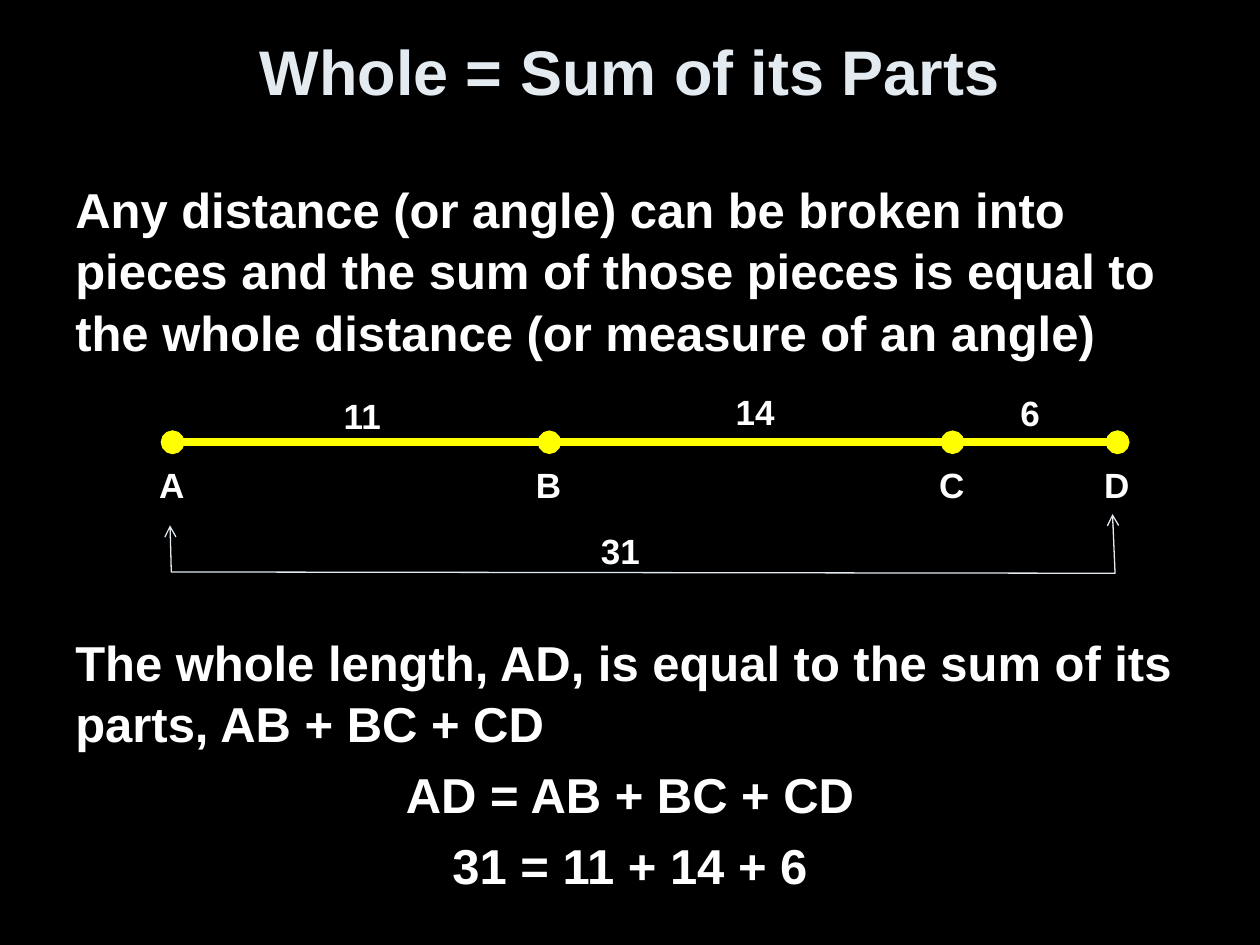
from lxml.etree import SubElement
from pptx import Presentation
from pptx.dml.color import RGBColor
from pptx.enum.shapes import MSO_CONNECTOR
from pptx.enum.text import MSO_ANCHOR, MSO_AUTO_SIZE, PP_ALIGN
from pptx.oxml.ns import qn
from pptx.util import Inches, Pt

BLACK = RGBColor(0x00, 0x00, 0x00)
WHITE = RGBColor(0xFF, 0xFF, 0xFF)
YELLOW = RGBColor(0xFF, 0xFF, 0x00)
PALE = RGBColor(0xE3, 0xEB, 0xF1)
FONT = "Arial"
LEFT, WIDTH = 0.5, 9

TITLE = "Whole = Sum of its Parts"
# Top, height and (text, alignment) paragraphs
BODIES = [
    (1.36, 1.76, [
        ("Any distance (or angle) can be broken into pieces and the sum of those "
         "pieces is equal to the whole distance (or measure of an angle)", PP_ALIGN.LEFT),
    ]),
    (4.95, 2.3, [
        ("The whole length, AD, is equal to the sum of its parts, AB + BC + CD", PP_ALIGN.LEFT),
        ("AD = AB + BC + CD", PP_ALIGN.CENTER),
        ("31 = 11 + 14 + 6", PP_ALIGN.CENTER),
    ]),
]
POINTS = {"A": 1.37, "B": 4.36, "C": 7.56, "D": 8.87}
SEGMENTS = ["AD", "AB", "CD"]
SEGMENT_Y, POINT_LABEL_TOP = 3.51, 3.63
POINT_LABEL_WIDTH, LABEL_HEIGHT = 0.41, 0.44
# Text, left, top, width
LENGTHS = [
    ("11", 2.63, 3.08, 0.5),
    ("14", 5.74, 3.05, 0.51),
    ("6", 8, 3.06, 0.36),
    ("31", 4.67, 4.15, 0.51),
]
BRACKET = [(1.35, 4.17), (1.36, 4.54), (8.85, 4.55), (8.83, 4.08)]


def add_span(para, text, size, color):
    span = para.add_run()
    span.text = text
    span.font.name = FONT
    span.font.size = Pt(size)
    span.font.bold = True
    span.font.color.rgb = color


def style_line(shape, color, width, ending):
    """Colour the line and put the same ending on both ends."""
    shape.line.color.rgb = color
    shape.line.width = Pt(width)
    outline = shape.line._get_or_add_ln()
    for end in ("a:headEnd", "a:tailEnd"):
        SubElement(outline, qn(end), type=ending)


def add_body(shapes, top, height, paragraphs):
    box = shapes.add_textbox(Inches(LEFT), Inches(top), Inches(WIDTH), Inches(height))
    frame = box.text_frame
    frame.word_wrap = True
    for index, (text, alignment) in enumerate(paragraphs):
        para = frame.add_paragraph() if index else frame.paragraphs[0]
        para.alignment = alignment
        para.line_spacing = 1.04
        if index:
            para.space_before = Pt(5.6)
        add_span(para, text, 28, WHITE)


def add_label(shapes, text, left, top, width):
    box = shapes.add_textbox(Inches(left), Inches(top), Inches(width), Inches(LABEL_HEIGHT))
    box.text_frame.word_wrap = False
    box.text_frame.auto_size = MSO_AUTO_SIZE.SHAPE_TO_FIT_TEXT
    add_span(box.text_frame.paragraphs[0], text, 20, WHITE)


def add_number_line(slide):
    shapes = slide.shapes.add_group_shape().shapes
    for start, end in SEGMENTS:
        segment = shapes.add_connector(
            MSO_CONNECTOR.STRAIGHT, Inches(POINTS[start]), Inches(SEGMENT_Y),
            Inches(POINTS[end]), Inches(SEGMENT_Y))
        style_line(segment, YELLOW, 4.5, "oval")
        SubElement(segment._element.spPr, qn("a:effectLst"))
    for name, x in POINTS.items():
        add_label(shapes, name, x - POINT_LABEL_WIDTH / 2, POINT_LABEL_TOP, POINT_LABEL_WIDTH)


def add_bracket(slide):
    corners = [(Inches(x), Inches(y)) for x, y in BRACKET]
    builder = slide.shapes.build_freeform(*corners[0])
    builder.add_line_segments(corners[1:], close=False)
    bracket = builder.convert_to_shape()
    bracket.fill.background()
    style_line(bracket, PALE, 0.75, "arrow")
    bracket.shadow.inherit = False


def main():
    deck = Presentation()
    deck.slide_width, deck.slide_height = Inches(10), Inches(7.5)
    slide = deck.slides.add_slide(deck.slide_layouts[5])
    slide.background.fill.solid()
    slide.background.fill.fore_color.rgb = BLACK

    title = slide.shapes.title
    title.left, title.top = Inches(LEFT), Inches(0.07)
    title.width, title.height = Inches(WIDTH), Inches(0.98)
    title.text_frame.vertical_anchor = MSO_ANCHOR.MIDDLE
    title.text_frame.paragraphs[0].alignment = PP_ALIGN.CENTER
    add_span(title.text_frame.paragraphs[0], TITLE, 36, PALE)

    for body in BODIES:
        add_body(slide.shapes, *body)
    add_number_line(slide)
    add_bracket(slide)
    for length in LENGTHS:
        add_label(slide.shapes, *length)
    deck.save("out.pptx")


if __name__ == "__main__":
    main()
